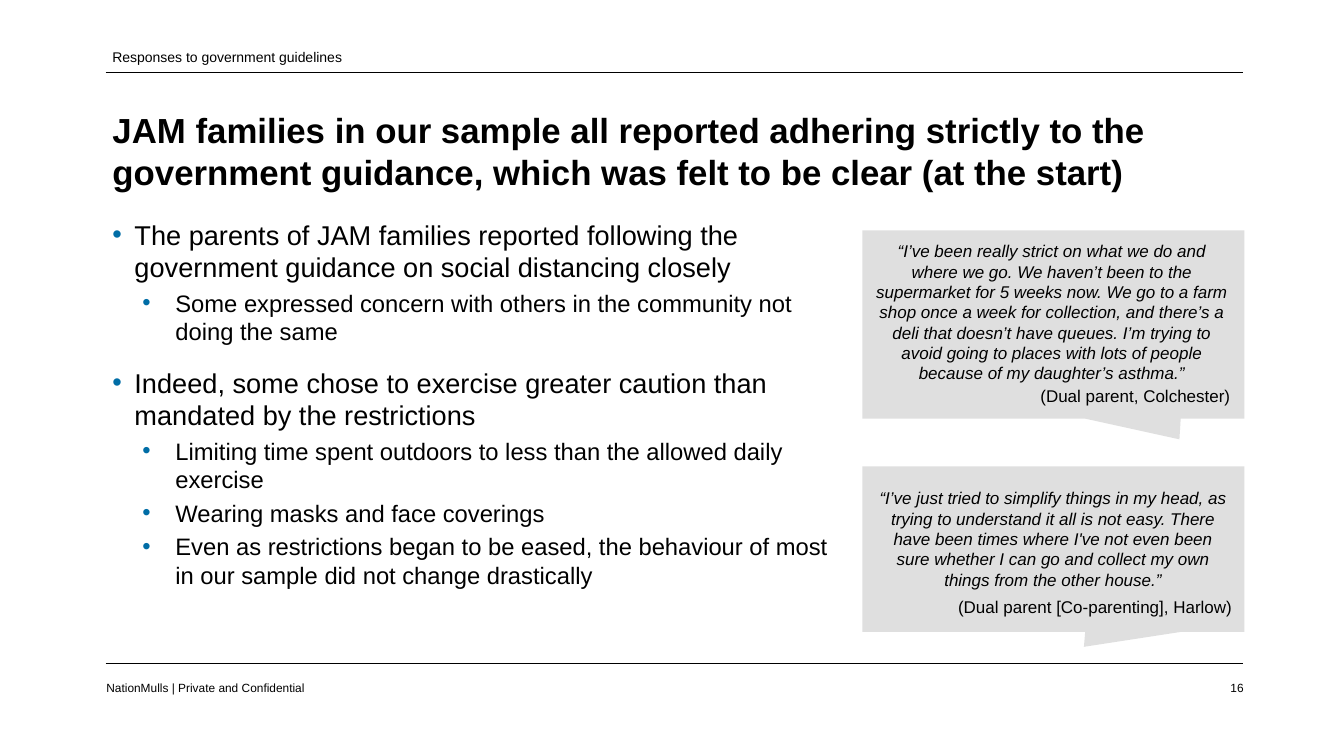
"""Build the slide on how families responded to government guidelines."""
from dataclasses import dataclass

from lxml import etree
from pptx import Presentation
from pptx import util as u
from pptx.dml.color import RGBColor
from pptx.enum import shapes, text
from pptx.oxml import ns

COLOURS = {"ink": "000000", "bullet": "006DA6", "callout": "DFDFDF"}
FONT = "Arial"
LEFT, RULE_LEFT, RULE_RIGHT = 1.74, 1.73, 20.33


@dataclass(frozen=True)
class Box:
    left: float
    top: float
    width: float
    height: float

    def lengths(self) -> list[u.Length]:
        return [u.Inches(v) for v in (self.left, self.top, self.width, self.height)]


@dataclass(frozen=True)
class Level:
    size: float
    margin: float
    hanging: float
    before: float


@dataclass(frozen=True)
class Label:
    text: str
    box: Box
    size: float = 20
    align: text.PP_ALIGN = text.PP_ALIGN.LEFT
    italic: bool = False
    inset: bool = True
    anchor: text.MSO_ANCHOR = text.MSO_ANCHOR.TOP


@dataclass(frozen=True)
class Callout:
    box: Box
    tip: tuple[float, float]


TITLE = (
    "JAM families in our sample all reported adhering strictly to the "
    "government guidance, which was felt to be clear (at the start)"
)
LEVELS = [Level(32, 0.36, 0.36, 18), Level(28, 1.03, 0.54, 0)]
POINTS = [
    (0, "The parents of JAM families reported following the government guidance "
        "on social distancing closely"),
    (1, "Some expressed concern with others in the community not doing the same"),
    (0, "Indeed, some chose to exercise greater caution than mandated by the restrictions"),
    (1, "Limiting time spent outdoors to less than the allowed daily exercise"),
    (1, "Wearing masks and face coverings"),
    (1, "Even as restrictions began to be eased, the behaviour of most in our sample "
        "did not change drastically"),
]
CALLOUTS = [
    Callout(Box(14.11, 3.77, 6.25, 3.08), (0.33, 0.61)),
    Callout(Box(14.11, 7.63, 6.25, 2.71), (0.08, 0.59)),
]
LABELS = [
    Label("Responses to government guidelines", Box(LEFT, 0.77, 10.33, 0.33), 16.5,
          anchor=text.MSO_ANCHOR.MIDDLE),
    Label("“I’ve been really strict on what we do and where we go. We haven’t been to the "
          "supermarket for 5 weeks now. We go to a farm shop once a week for collection, "
          "and there’s a deli that doesn’t have queues. I’m trying to avoid going to places "
          "with lots of people because of my daughter’s asthma.”",
          Box(14.21, 3.89, 6, 2.46), align=text.PP_ALIGN.CENTER, italic=True),
    Label("(Dual parent, Colchester)", Box(15.31, 6.26, 4.92, 0.44),
          align=text.PP_ALIGN.RIGHT),
    Label("“I’ve just tried to simplify things in my head, as trying to understand it all is "
          "not easy. There have been times where I've not even been sure whether I can go "
          "and collect my own things from the other house.”",
          Box(14.23, 7.93, 6, 1.78), align=text.PP_ALIGN.CENTER, italic=True),
    Label("(Dual parent [Co-parenting], Harlow)", Box(15.34, 9.71, 4.92, 0.44),
          align=text.PP_ALIGN.RIGHT),
    Label("NationMulls | Private and Confidential", Box(LEFT, 11.13, 4.51, 0.33), 14,
          inset=False),
    Label("16", Box(19.74, 11.13, 0.61, 0.33), 14, text.PP_ALIGN.RIGHT, inset=False),
]


def colour(name: str) -> RGBColor:
    """Return a named colour."""
    return RGBColor.from_string(COLOURS[name])


def format_runs(paragraph, size: float, bold: bool = False, italic: bool = False) -> None:
    """Apply the slide's font to every run of a paragraph."""
    for run in paragraph.runs:
        run.font.name, run.font.size = FONT, u.Pt(size)
        run.font.bold, run.font.italic = bold, italic
        run.font.color.rgb = colour("ink")


def prepare_frame(shape, anchor: text.MSO_ANCHOR):
    """Return a wrapping text frame without automatic shrinking."""
    frame = shape.text_frame
    frame.word_wrap, frame.auto_size = True, text.MSO_AUTO_SIZE.NONE
    frame.vertical_anchor = anchor
    return frame


def place(shape, box: Box) -> None:
    """Move a placeholder to a box."""
    shape.left, shape.top, shape.width, shape.height = box.lengths()


def add_bullet(paragraph, level: Level) -> None:
    """Give a paragraph a coloured round bullet and a hanging indent."""
    properties = paragraph._p.get_or_add_pPr()
    properties.set("marL", str(u.Inches(level.margin)))
    properties.set("indent", str(-u.Inches(level.hanging)))
    bullet_colour = etree.SubElement(properties, ns.qn("a:buClr"))
    etree.SubElement(bullet_colour, ns.qn("a:srgbClr"), val=COLOURS["bullet"])
    etree.SubElement(properties, ns.qn("a:buFont"), typeface=FONT)
    etree.SubElement(properties, ns.qn("a:buChar"), char="•")


def fill_title(shape) -> None:
    """Write the headline into the title placeholder."""
    place(shape, Box(LEFT, 1.73, 18.61, 1.54))
    frame = prepare_frame(shape, text.MSO_ANCHOR.TOP)
    frame.text = TITLE
    frame.paragraphs[0].alignment = text.PP_ALIGN.LEFT
    format_runs(frame.paragraphs[0], 41, bold=True)


def fill_body(shape) -> None:
    """Write the two-level list into the body placeholder."""
    place(shape, Box(LEFT, 3.52, 12.08, 7.12))
    frame = prepare_frame(shape, text.MSO_ANCHOR.TOP)
    frame.text = "\n".join(wording for _, wording in POINTS)
    for paragraph, (depth, _) in zip(frame.paragraphs, POINTS):
        level = LEVELS[depth]
        paragraph.level = depth
        paragraph.space_before, paragraph.space_after = u.Pt(level.before), u.Pt(6)
        add_bullet(paragraph, level)
        format_runs(paragraph, level.size)


def add_rule(slide, top: float) -> None:
    """Draw a thin rule across the content width."""
    rule = slide.shapes.add_connector(
        shapes.MSO_CONNECTOR.STRAIGHT, u.Inches(RULE_LEFT), u.Inches(top),
        u.Inches(RULE_RIGHT), u.Inches(top))
    rule.line.color.rgb, rule.line.width = colour("ink"), u.Pt(0.75)
    etree.SubElement(rule._element.spPr, ns.qn("a:effectLst"))


def add_callout(slide, callout: Callout) -> None:
    """Draw a grey speech bubble."""
    shape = slide.shapes.add_shape(
        shapes.MSO_SHAPE.RECTANGULAR_CALLOUT, *callout.box.lengths())
    shape.adjustments[0], shape.adjustments[1] = callout.tip
    shape.shadow.inherit = False
    shape.fill.solid()
    shape.fill.fore_color.rgb = colour("callout")
    shape.line.fill.background()


def add_label(slide, label: Label) -> None:
    """Add a one-paragraph text box."""
    frame = prepare_frame(slide.shapes.add_textbox(*label.box.lengths()), label.anchor)
    if not label.inset:
        frame.margin_left = frame.margin_top = frame.margin_right = frame.margin_bottom = 0
    frame.text = label.text
    frame.paragraphs[0].alignment = label.align
    format_runs(frame.paragraphs[0], label.size, italic=label.italic)


def main() -> None:
    """Assemble and save the presentation."""
    presentation = Presentation()
    presentation.slide_width, presentation.slide_height = u.Inches(21.99), u.Inches(12.37)
    slide = presentation.slides.add_slide(presentation.slide_layouts[1])
    fill_title(slide.shapes.title)
    fill_body(slide.placeholders[1])
    for top in (1.18, 10.85):
        add_rule(slide, top)
    for callout in CALLOUTS:
        add_callout(slide, callout)
    for label in LABELS:
        add_label(slide, label)
    presentation.save("out.pptx")


if __name__ == "__main__":
    main()
